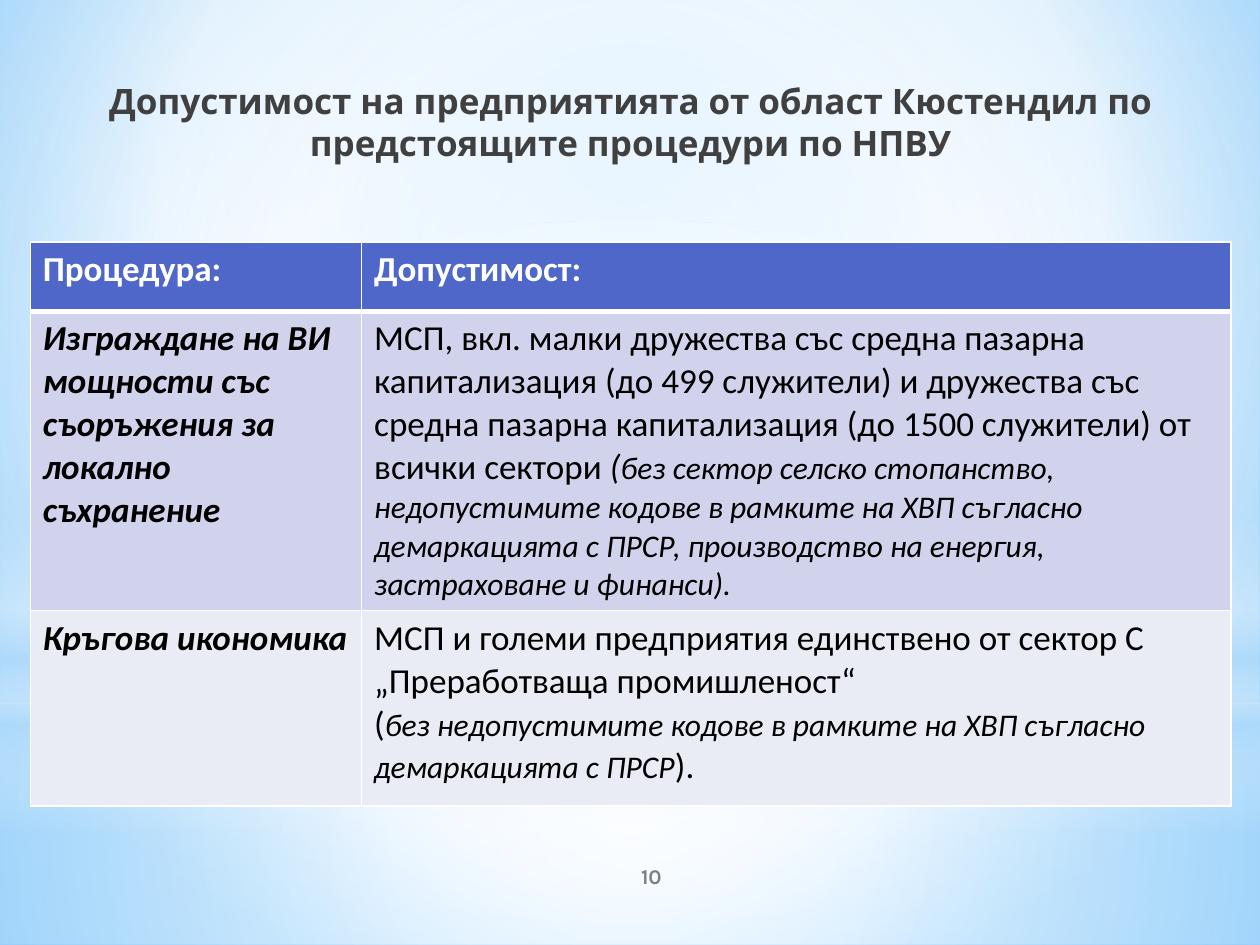
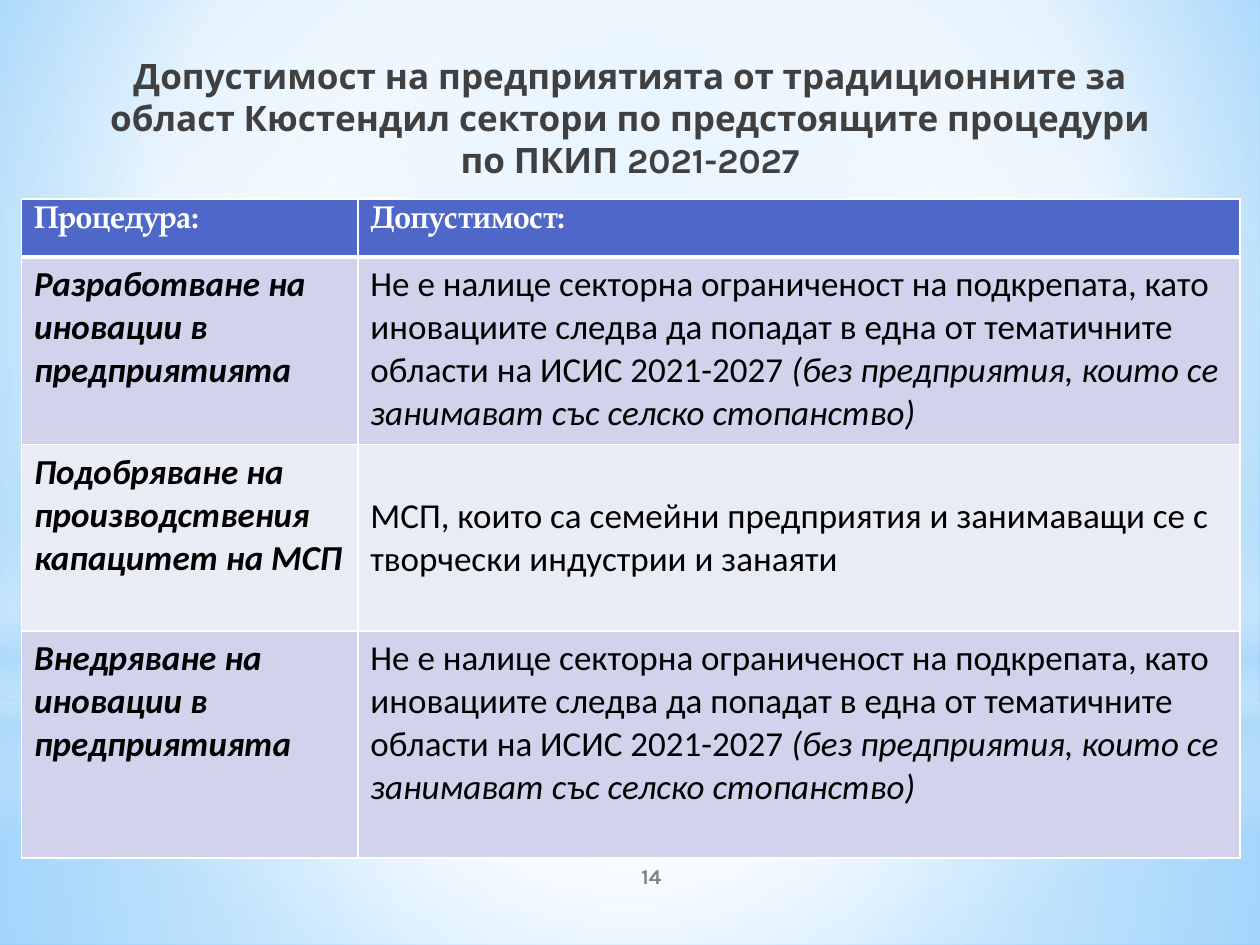
import pptx
import pptx.util
import pptx.dml.color
import pptx.enum.shapes
import pptx.enum.text
import pptx.oxml.ns
from lxml import etree

Inches, Pt = pptx.util.Inches, pptx.util.Pt
RGBColor = pptx.dml.color.RGBColor
MSO_SHAPE = pptx.enum.shapes.MSO_SHAPE
MSO_ANCHOR = pptx.enum.text.MSO_ANCHOR
PP_ALIGN = pptx.enum.text.PP_ALIGN
qn = pptx.oxml.ns.qn

WHITE = RGBColor(0xFF, 0xFF, 0xFF)
BLACK = RGBColor(0x00, 0x00, 0x00)
TITLE_GRAY = RGBColor(0x40, 0x40, 0x40)
NUMBER_GRAY = RGBColor(0x80, 0x80, 0x80)
HEADER_BLUE = RGBColor(0x4E, 0x67, 0xC8)
ROW_DARK = RGBColor(0xD0, 0xD3, 0xEB)
ROW_LIGHT = RGBColor(0xE9, 0xEB, 0xF5)
SKY = RGBColor(0xB4, 0xDC, 0xFA)
BG_EDGE = RGBColor(0x9E, 0xD5, 0xFF)
BG_DEEP = RGBColor(0x5B, 0xB9, 0xFF)

FORMATS = {
    "title": {"name": "Karla", "size": Pt(20), "bold": True},
    "number": {"name": "Karla", "size": Pt(12), "bold": True},
    "head": {"name": "Calibri", "size": Pt(20), "bold": True},
    "serif head": {"name": "TeX Gyre Pagella", "size": Pt(18), "bold": True},
    "procedure": {"name": "Calibri", "size": Pt(20), "bold": True, "italic": True},
    "plain": {"name": "Calibri", "size": Pt(20), "bold": False, "italic": False},
    "italic": {"name": "Calibri", "size": Pt(20), "bold": False, "italic": True},
    "small": {"name": "Calibri", "size": Pt(18), "bold": False, "italic": True},
}


def set_gradient(fill, element, stops, focus=None):
    fill.gradient()
    grad = element.find(".//" + qn("a:gradFill"))
    for child in list(grad):
        grad.remove(child)
    stop_list = etree.SubElement(grad, qn("a:gsLst"))
    for pos, color, alpha in stops:
        gs = etree.SubElement(stop_list, qn("a:gs"), pos=str(pos * 1000))
        clr = etree.SubElement(gs, qn("a:srgbClr"), val=str(color))
        if alpha < 100:
            etree.SubElement(clr, qn("a:alpha"), val=str(alpha * 1000))
    if focus:
        circle = etree.SubElement(grad, qn("a:path"), path="circle")
        sides = {k: str(v * 1000) for k, v in zip("ltrb", focus)}
        etree.SubElement(circle, qn("a:fillToRect"), sides)
    else:
        etree.SubElement(grad, qn("a:lin"), ang="5400000", scaled="0")


def add_run(p, text, style, color):
    r = p.add_run()
    r.text = text
    for key, value in FORMATS[style].items():
        setattr(r.font, key, value)
    r.font.color.rgb = color


NO_LIMIT = [[
    ("Не е налице секторна ограниченост на подкрепата, като иновациите следва да "
     "попадат в една от тематичните области на ИСИС 2021-2027 ", "plain"),
    ("(без предприятия, които се занимават със селско стопанство)", "italic"),
]]

SLIDES = [
    {
        "title": "Допустимост на предприятията от област Кюстендил по "
                 "предстоящите процедури по НПВУ",
        "title_box": (0.17, 0.58, 9.67, 1.24),
        "number": "10",
        "table_at": (0.24, 1.92),
        "cols": (2.63, 6.9),
        "rows": (0.55, 2.37, 1.55),
        "head": "head",
        "body": [
            ("Изграждане на ВИ мощности със съоръжения за локално съхранение", [[
                ("МСП, вкл. малки дружества със средна пазарна капитализация "
                 "(до 499 служители) и дружества със средна пазарна капитализация "
                 "(до 1500 служители) от всички сектори ", "plain"),
                ("(", "italic"),
                ("без сектор селско стопанство, недопустимите кодове в рамките на "
                 "ХВП съгласно демаркацията с ПРСР, производство на енергия, "
                 "застраховане и финанси).", "small"),
            ]], MSO_ANCHOR.TOP),
            ("Кръгова икономика", [
                [("МСП и големи предприятия единствено от сектор C "
                  "„Преработваща промишленост“", "plain")],
                [("(", "plain"),
                 ("без недопустимите кодове в рамките на ХВП съгласно "
                  "демаркацията с ПРСР", "small"),
                 (").", "plain")],
            ], MSO_ANCHOR.TOP),
        ],
    },
    {
        "title": "Допустимост на предприятията от традиционните за област Кюстендил "
                 "сектори по предстоящите процедури по ПКИП 2021-2027",
        "title_box": (0.67, 0.38, 8.66, 0.79),
        "number": "14",
        "table_at": (0.17, 1.58),
        "cols": (2.67, 7),
        "rows": (0.46, 1.49, 1.48, 1.8),
        "head": "serif head",
        "body": [
            ("Разработване на иновации в предприятията", NO_LIMIT, MSO_ANCHOR.TOP),
            ("Подобряване на производствения капацитет на МСП",
             [[("МСП, които са семейни предприятия и занимаващи се с творчески "
                "индустрии и занаяти", "plain")]], MSO_ANCHOR.MIDDLE),
            ("Внедряване на иновации в предприятията", NO_LIMIT, MSO_ANCHOR.TOP),
        ],
    },
]

CENTER = (50, 50, 50, 50)
BACKDROP = [
    (MSO_SHAPE.RECTANGLE, (0, 5.58, 10, 1.92),
     [(0, WHITE, 91), (37, WHITE, 76), (100, SKY, 79)], CENTER),
    (MSO_SHAPE.RECTANGLE, (0, 0, 10, 5.58),
     [(0, WHITE, 89), (48, WHITE, 62), (100, SKY, 79)], CENTER),
    (MSO_SHAPE.RECTANGLE, (0, 4.12, 10, 2.5),
     [(0, WHITE, 0), (29, WHITE, 30), (45, SKY, 40),
      (55, WHITE, 26), (65, SKY, 60), (100, WHITE, 0)], None),
    (MSO_SHAPE.OVAL, (0, 1.75, 10, 5.58),
     [(0, WHITE, 100), (56, WHITE, 0)], CENTER),
]

prs = pptx.Presentation()
prs.slide_width, prs.slide_height = Inches(10), Inches(7.5)
layout = prs.slide_layouts[5]
master = prs.slide_master
slides = [prs.slides.add_slide(layout) for _ in SLIDES]

set_gradient(master.background.fill, master.element,
             [(0, BG_EDGE, 100), (60, WHITE, 100), (100, BG_DEEP, 100)],
             (20, 10, 20, 60))
for i, (kind, box, stops, focus) in enumerate(BACKDROP):
    sp = slides[0].shapes.add_shape(kind, *map(Inches, box))
    sp.shadow.inherit = False
    sp.line.fill.background()
    set_gradient(sp.fill, sp.element, stops, focus)
    sp.element.find(".//" + qn("p:cNvPr")).set("id", str(100 + i))
    master.shapes.element.insert(2 + i, sp.element)

for s, data in zip(slides, SLIDES):
    sp = s.shapes.title
    sp.left, sp.top, sp.width, sp.height = map(Inches, data["title_box"])
    tf = sp.text_frame
    tf.word_wrap = True
    tf.auto_size = pptx.enum.text.MSO_AUTO_SIZE.NONE
    tf.vertical_anchor = MSO_ANCHOR.TOP
    p = tf.paragraphs[0]
    p.alignment = PP_ALIGN.CENTER
    p.line_spacing = 1.0
    add_run(p, data["title"], "title", TITLE_GRAY)

    cols, rows = data["cols"], data["rows"]
    left, top = data["table_at"]
    table = s.shapes.add_table(len(rows), len(cols), Inches(left), Inches(top),
                               Inches(sum(cols)), Inches(sum(rows))).table
    for column, width in zip(table.columns, cols):
        column.width = Inches(width)
    for row, height in zip(table.rows, rows):
        row.height = Inches(height)

    header = [[[(text, data["head"])]] for text in ("Процедура:", "Допустимост:")]
    grid = [(header, MSO_ANCHOR.TOP)]
    for procedure, eligibility, anchor in data["body"]:
        grid.append(([[[(procedure, "procedure")]], eligibility], anchor))

    for i, (contents, anchor) in enumerate(grid):
        for j, paragraphs in enumerate(contents):
            cell = table.cell(i, j)
            tc_pr = cell._tc.get_or_add_tcPr()
            for side in "LRTB":
                thick = (i, side) in ((0, "B"), (1, "T"))
                ln = etree.SubElement(tc_pr, qn("a:ln" + side),
                                      w=str(Pt(3 if thick else 1)))
                solid = etree.SubElement(ln, qn("a:solidFill"))
                etree.SubElement(solid, qn("a:srgbClr"), val=str(WHITE))
            cell.fill.solid()
            cell.fill.fore_color.rgb = (
                HEADER_BLUE if i == 0 else ROW_DARK if i % 2 else ROW_LIGHT)
            if j == 1:
                cell.vertical_anchor = anchor
            tf = cell.text_frame
            for k, runs in enumerate(paragraphs):
                p = tf.add_paragraph() if k else tf.paragraphs[0]
                for text, style in runs:
                    add_run(p, text, style, BLACK if i else WHITE)

    sp = s.shapes.add_textbox(Inches(4.17), Inches(6.75), Inches(2), Inches(0.4))
    tf = sp.text_frame
    tf.word_wrap = True
    tf.vertical_anchor = MSO_ANCHOR.MIDDLE
    p = tf.paragraphs[0]
    p.alignment = PP_ALIGN.CENTER
    add_run(p, data["number"], "number", NUMBER_GRAY)

prs.save("out.pptx")
